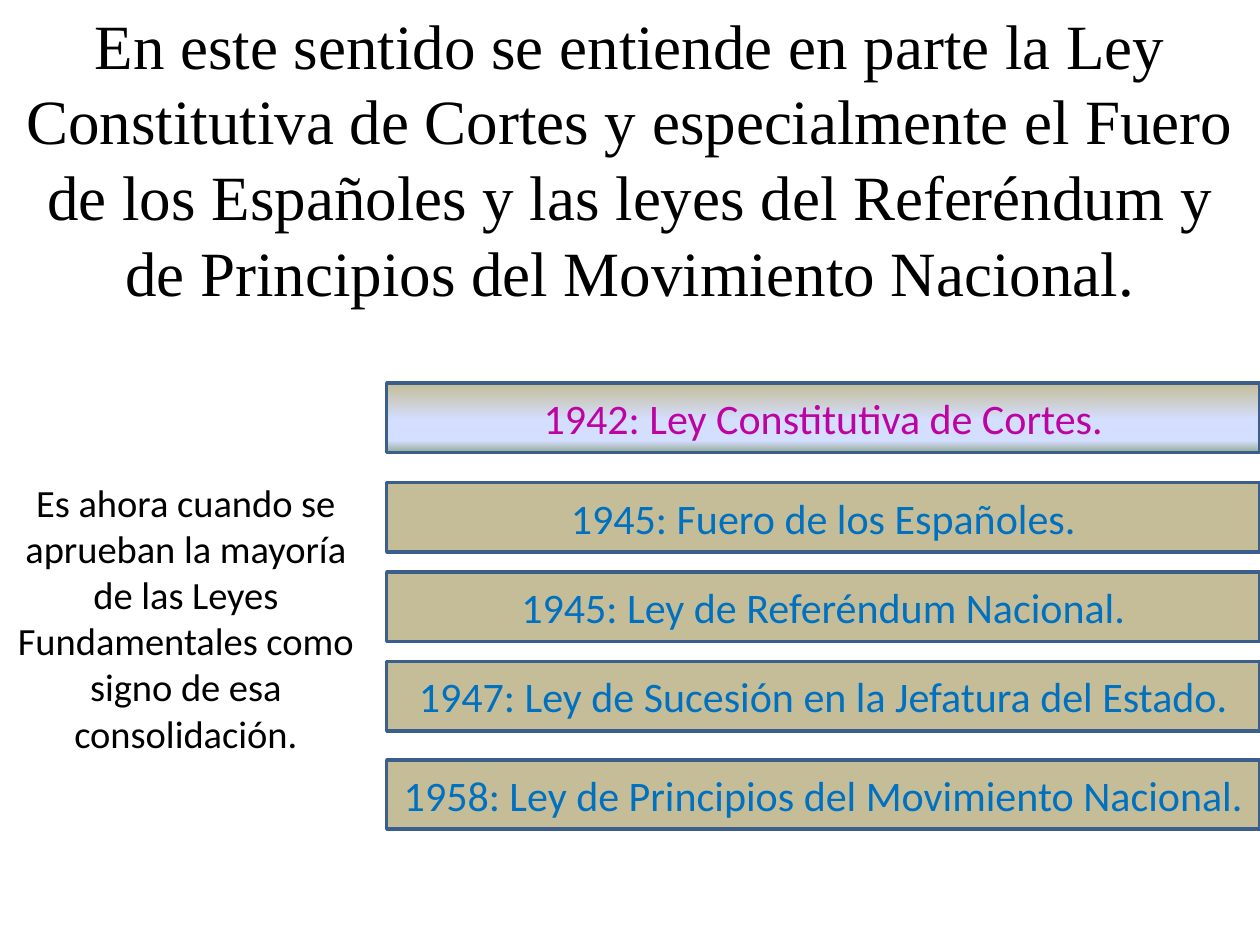
from lxml import etree
from pptx import Presentation
from pptx.dml.color import RGBColor
from pptx.enum.shapes import MSO_SHAPE
from pptx.enum.text import MSO_ANCHOR, PP_ALIGN
from pptx.oxml.ns import qn
from pptx.util import Pt

RECTANGLE = MSO_SHAPE.RECTANGLE
CENTER = PP_ALIGN.CENTER
MIDDLE = MSO_ANCHOR.MIDDLE

BLACK = RGBColor(0x00, 0x00, 0x00)
TAN = RGBColor(0xC4, 0xBD, 0x97)
PALE_BLUE = RGBColor(0xD4, 0xDE, 0xFF)
SAGE = RGBColor(0x96, 0xAB, 0x94)
OUTLINE = RGBColor(0x3A, 0x5F, 0x8C)
MAGENTA = RGBColor(0xBD, 0x03, 0xA2)
BLUE = RGBColor(0x00, 0x70, 0xC0)

HIGHLIGHT_STOPS = [(0, TAN), (53, PALE_BLUE), (83, PALE_BLUE), (100, SAGE)]

INTRO = (
    "En este sentido se entiende en parte la Ley Constitutiva de Cortes y "
    "especialmente el Fuero de los Españoles y las leyes del Referéndum y "
    "de Principios del Movimiento Nacional."
)
COMMENT = (
    "Es ahora cuando se aprueban la mayoría de las Leyes Fundamentales "
    "como signo de esa consolidación."
)
LAWS = [
    (218.9, "1942: Ley Constitutiva de Cortes."),
    (275.8, "1945: Fuero de los Españoles."),
    (326.9, "1945: Ley de Referéndum Nacional."),
    (378, "1947: Ley de Sucesión en la Jefatura del Estado."),
    (434.2, "1958: Ley de Principios del Movimiento Nacional."),
]


def write_centered(shape, text, font_format):
    shape.text_frame.word_wrap = True
    paragraph = shape.text_frame.paragraphs[0]
    paragraph.alignment = CENTER
    run = paragraph.add_run()
    run.text = text
    color = font_format["color"]
    run.font.color.rgb = color
    for attribute in ("name", "size"):
        setattr(run.font, attribute, font_format[attribute])


def fill_top_to_bottom(shape, stops):
    """Fill with a vertical gradient of (percent, colour) stops."""
    shape.fill.gradient()
    shape.fill.gradient_angle = 270  # counter-clockwise, so downwards
    stop_list = shape.element.spPr.find(qn("a:gradFill")).find(qn("a:gsLst"))
    for old_stop in list(stop_list):
        stop_list.remove(old_stop)
    for percent, color in stops:
        stop = etree.SubElement(stop_list, qn("a:gs"), pos=str(percent * 1000))
        etree.SubElement(stop, qn("a:srgbClr"), val=str(color))


presentation = Presentation()
presentation.slide_width = Pt(720)
presentation.slide_height = Pt(540)
slide = presentation.slides.add_slide(presentation.slide_layouts[6])

intro = slide.shapes.add_textbox(Pt(0), Pt(0), Pt(720), Pt(181.4))
write_centered(intro, INTRO, {"name": "Times New Roman", "size": Pt(36), "color": BLACK})

for position, (top, law) in enumerate(LAWS):
    highlighted = position == 0
    bar = slide.shapes.add_shape(RECTANGLE, Pt(221), Pt(top), Pt(499), Pt(39.6))
    bar.shadow.inherit = False
    bar.line.color.rgb = OUTLINE
    bar.line.width = Pt(2)
    if highlighted:
        fill_top_to_bottom(bar, HIGHLIGHT_STOPS)
    else:
        bar.fill.solid()
        bar.fill.fore_color.rgb = TAN
    bar.text_frame.vertical_anchor = MIDDLE
    law_color = MAGENTA if highlighted else BLUE
    write_centered(bar, law, {"name": "Calibri", "size": Pt(24), "color": law_color})

comment = slide.shapes.add_textbox(Pt(0), Pt(270), Pt(212.4), Pt(167))
write_centered(comment, COMMENT, {"name": "Calibri", "size": Pt(22), "color": BLACK})

presentation.save("out.pptx")
